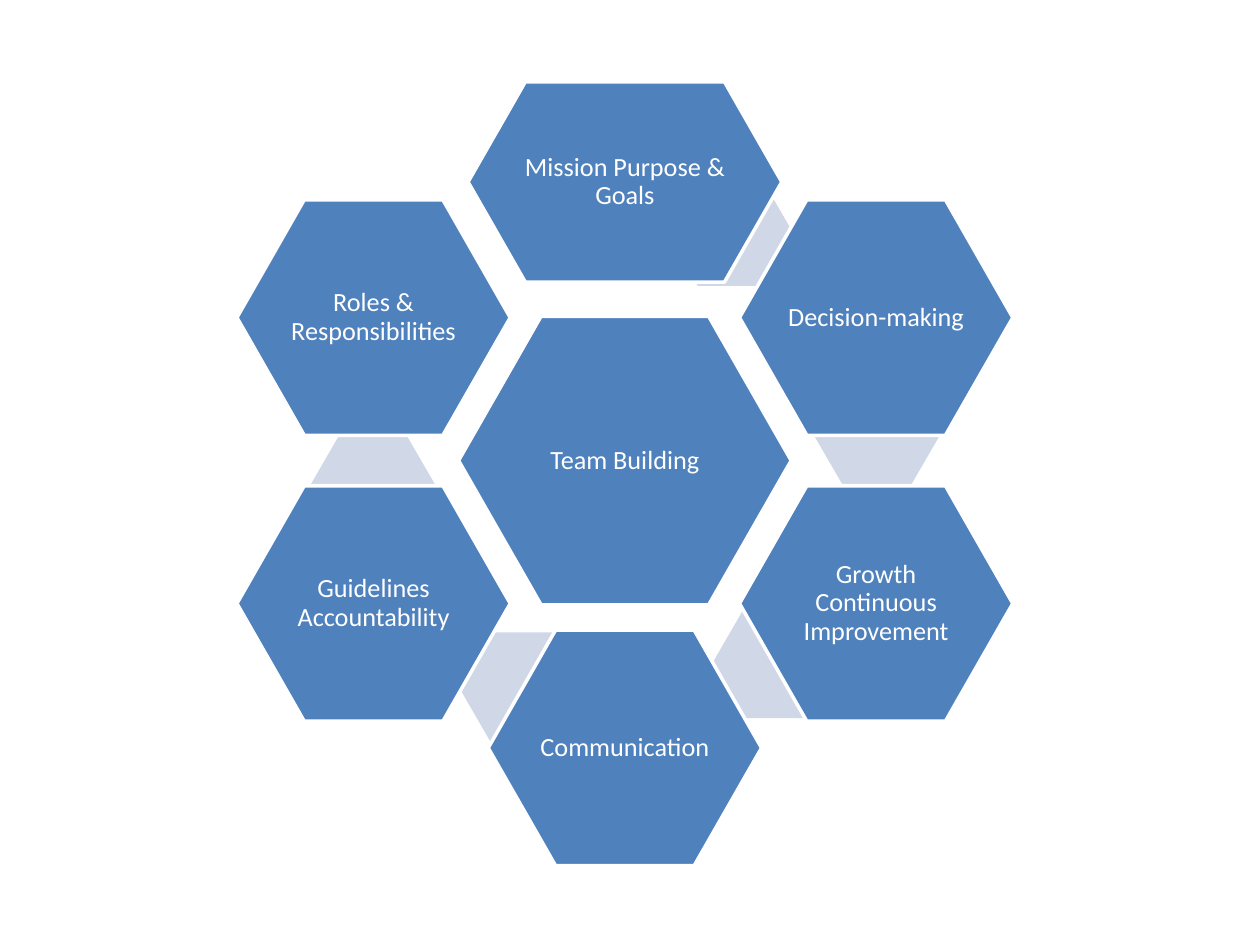
"""Build a team-building slide: six linked hexagons around a central one."""
from pptx import Presentation
from pptx import util as u
from pptx.dml.color import RGBColor
from pptx.enum import shapes, text

COLORS = {"hexagon": "4F81BD", "link": "D0D8E8", "white": "FFFFFF"}
FONT, FONT_SIZE = "Calibri", 15
CENTER = (357.1, 263.2)
COLUMN, ROW = 143.6, 81.7
CORE_SIZE, RING_SIZE, TOP_SIZE = (190.1, 164.9), (156.2, 134.6), (179.3, 114.5)
LINK_SIZE = (72, 61.9)

TOPICS = [
    {"label": "Team Building", "offset": (0, 0), "size": CORE_SIZE},
    {"label": "Mission Purpose & Goals", "offset": (0, -159.2), "size": TOP_SIZE,
     "link": (59.8, -130.7)},
    {"label": "Decision-making", "offset": (COLUMN, -ROW), "link": (144, -14.5)},
    {"label": "Growth Continuous Improvement", "offset": (COLUMN, ROW),
     "link": (85.7, 116.3)},
    {"label": "Communication", "offset": (0, 2 * ROW + 0.8), "link": (-59, 129.2)},
    {"label": "Guidelines Accountability", "offset": (-COLUMN, ROW),
     "link": (-144, 14.5)},
    {"label": "Roles & Responsibilities", "offset": (-COLUMN, -ROW)},
]


def color(name):
    return RGBColor.from_string(COLORS[name])


def add_hexagon(slide, offset, size, fill, adjustment):
    left, top = (middle + shift - length / 2
                 for middle, shift, length in zip(CENTER, offset, size))
    shape = slide.shapes.add_shape(
        shapes.MSO_SHAPE.HEXAGON, u.Pt(left), u.Pt(top), *map(u.Pt, size))
    shape.adjustments[0] = adjustment
    shape.shadow.inherit = False
    shape.fill.solid()
    shape.fill.fore_color.rgb = color(fill)
    shape.line.fill.background()
    return shape


def add_topic(slide, label, offset, size=RING_SIZE):
    shape = add_hexagon(slide, offset, size, "hexagon", 0.286)
    shape.line.color.rgb = color("white")
    shape.line.width = u.Pt(2)
    frame = shape.text_frame
    frame.text = label
    frame.word_wrap = True
    frame.vertical_anchor = text.MSO_ANCHOR.MIDDLE
    for side in ("left", "top", "right", "bottom"):
        setattr(frame, f"margin_{side}", u.Pt(1.5))
    paragraph = frame.paragraphs[0]
    paragraph.alignment = text.PP_ALIGN.CENTER
    paragraph.line_spacing = 0.9
    font = paragraph.runs[0].font
    font.name, font.size = FONT, u.Pt(FONT_SIZE)
    font.color.rgb = color("white")


def main():
    presentation = Presentation()
    presentation.slide_width, presentation.slide_height = u.Pt(720), u.Pt(540)
    slide = presentation.slides.add_slide(presentation.slide_layouts[6])
    for topic in TOPICS:
        if "link" in topic:
            add_hexagon(slide, topic["link"], LINK_SIZE, "link", 0.289)
        add_topic(slide, topic["label"], topic["offset"], topic.get("size", RING_SIZE))
    presentation.save("out.pptx")


if __name__ == "__main__":
    main()
